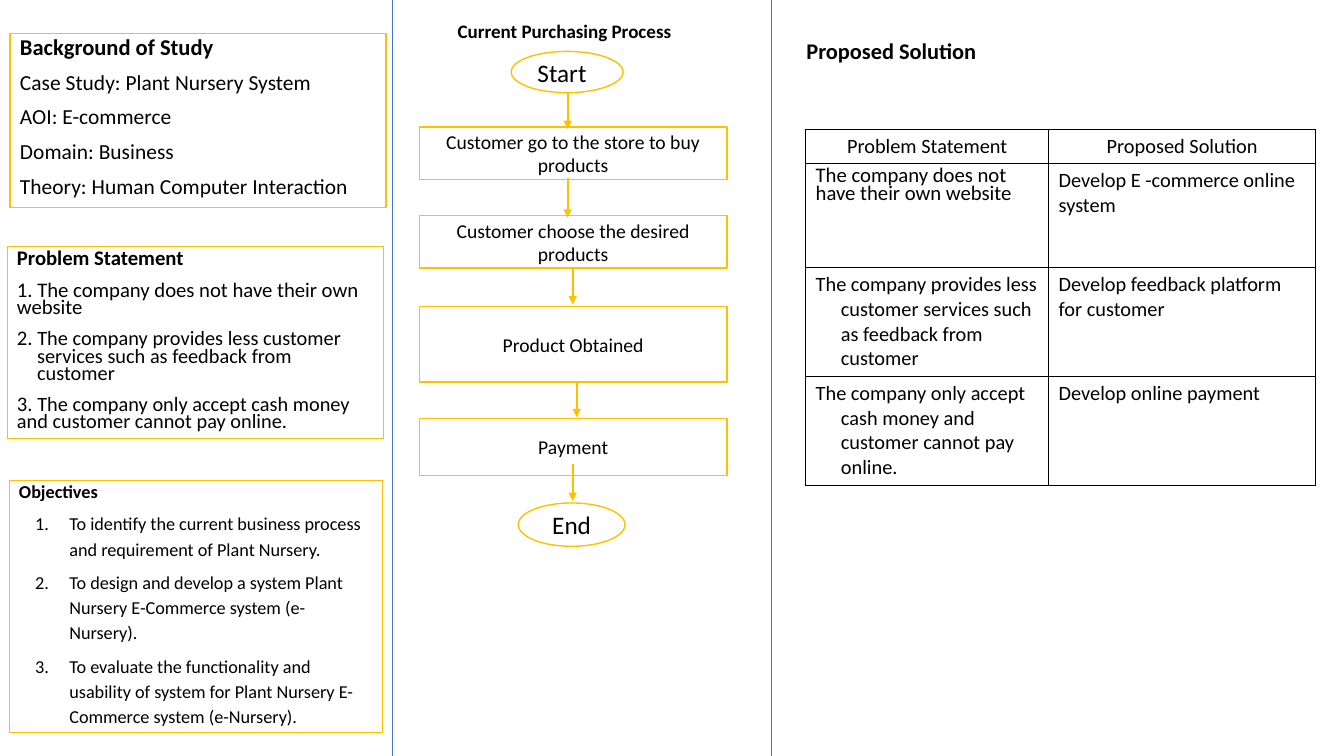
import pptx
import pptx.dml.color
import pptx.enum.shapes
import pptx.enum.text
import pptx.oxml
import pptx.oxml.ns
import pptx.util
from lxml import etree

Inches, Pt = pptx.util.Inches, pptx.util.Pt
SHAPES = pptx.enum.shapes.MSO_SHAPE
ALIGN = pptx.enum.text.PP_ALIGN
MIDDLE = pptx.enum.text.MSO_ANCHOR.MIDDLE

# Content
BACKGROUND = ["Case Study: Plant Nursery System", "AOI: E-commerce", "Domain: Business",
              "Theory: Human Computer Interaction"]
PROBLEMS = ["The company does not have their own website",
            "The company provides less customer services such as feedback from customer",
            "The company only accept cash money and customer cannot pay online."]
OBJECTIVES = [
    "To identify the current business process and requirement of Plant Nursery.",
    "To design and develop a system Plant Nursery E-Commerce system (e-Nursery).",
    "To evaluate the functionality and usability of system for Plant Nursery E-Commerce system (e-Nursery).",
]
SOLUTIONS = ["Develop E -commerce online system", "Develop feedback platform for customer",
             "Develop online payment"]
# Step text, top, height
STEPS = [("Customer go to the store to buy products", 1.26, 0.52),
         ("Customer choose the desired products", 2.14, 0.52),
         ("Product Obtained", 3.04, 0.75), ("Payment", 4.15, 0.57)]
# Terminal text, position and size, alignment
TERMINALS = [("Start", (5.07, 0.51, 1.11, 0.41), ALIGN.LEFT),
             ("End", (5.14, 4.99, 1.06, 0.43), ALIGN.CENTER)]
# Arrow x, top, bottom
ARROWS = [(5.63, 0.92, 1.28), (5.63, 1.77, 2.16), (5.68, 2.66, 3.02),
          (5.72, 3.78, 4.14), (5.68, 4.6, 4.97)]

# Layout
WIDTH, HEIGHT = 13.33, 7.5
FLOW_LEFT, FLOW_WIDTH = 4.16, 3.05
DIVIDERS = (3.89, 7.65)
TABLE_AT = (7.99, 1.28)
TABLE_COLUMNS = (2.41, 2.65)
TABLE_ROWS = (0.34, 1.03, 1.08, 1.08)
COLORS = {"text": "000000", "gold": "FFC000", "blue": "4472C4", "white": "FFFFFF"}

deck = pptx.Presentation()
deck.slide_width, deck.slide_height = Inches(WIDTH), Inches(HEIGHT)
slide = deck.slides.add_slide(deck.slide_layouts[6])


def color(name):
    return pptx.dml.color.RGBColor.from_string(COLORS[name])


def write(frame, text, size=14, bold=False, align=ALIGN.LEFT, spacing=None, before=0,
          indent=(0, 0), numbered=False):
    """Add one paragraph; text is a string or a list of (string, size) runs."""
    frame.word_wrap = True
    first = frame.paragraphs[0]
    paragraph = frame.add_paragraph() if first.runs else first
    paragraph.alignment, paragraph.space_before = align, Pt(before)
    if spacing:
        paragraph.line_spacing = spacing
    properties = paragraph._p.get_or_add_pPr()
    if indent[0]:
        properties.set("marL", str(Inches(indent[0])))
        properties.set("indent", str(Inches(indent[1])))
    if numbered:
        bullet = etree.SubElement(properties, pptx.oxml.ns.qn("a:buAutoNum"))
        bullet.set("type", "arabicPeriod")
    for words, points in [(text, size)] if isinstance(text, str) else text:
        run = paragraph.add_run()
        run.text = words
        run.font.name, run.font.size, run.font.bold = "Calibri", Pt(points), bold
        run.font.color.rgb = color("text")


def add_box(kind, place, line_width=1.0, anchor=pptx.enum.text.MSO_ANCHOR.TOP):
    box = slide.shapes.add_shape(kind, *map(Inches, place))
    box.shadow.inherit = False
    box.fill.solid()
    box.fill.fore_color.rgb = color("white")
    box.line.color.rgb, box.line.width = color("gold"), Pt(line_width)
    box.text_frame.vertical_anchor = anchor
    return box.text_frame


def add_line(x, top, bottom, hue, width, arrow=False):
    line = slide.shapes.add_connector(pptx.enum.shapes.MSO_CONNECTOR.STRAIGHT,
                                      *map(Inches, (x, top, x, bottom)))
    line.line.color.rgb, line.line.width = color(hue), Pt(width)
    if arrow:
        etree.SubElement(line.line._get_or_add_ln(), pptx.oxml.ns.qn("a:tailEnd")).set("type", "triangle")
    etree.SubElement(line._element.spPr, pptx.oxml.ns.qn("a:effectLst"))


def add_heading(text, place, **style):
    write(slide.shapes.add_textbox(*map(Inches, place)).text_frame, text, bold=True, **style)


def add_border(cell):
    for side in ("lnL", "lnR", "lnT", "lnB"):
        cell._tc.get_or_add_tcPr().append(pptx.oxml.parse_xml(
            f'<a:{side} xmlns:a="http://schemas.openxmlformats.org/drawingml/2006/main" w="9525">'
            f'<a:solidFill><a:srgbClr val="{COLORS["text"]}"/></a:solidFill></a:{side}>'))


# Left column: background, problems, objectives
background = add_box(SHAPES.RECTANGLE, (0.1, 0.33, 3.73, 1.73))
write(background, "Background of Study", size=16.1, bold=True, spacing=0.8)
for fact in BACKGROUND:
    write(background, fact, size=15.3, spacing=0.8, before=10)

problems = add_box(SHAPES.RECTANGLE, (0.07, 2.45, 3.73, 1.9), line_width=0.75)
write(problems, "Problem Statement", size=14.8, bold=True, spacing=0.7)
for number, problem in enumerate(PROBLEMS, 1):
    write(problems, [(f"{number}. ", 14.8), (problem, 14.8 if number == 1 else 14.5)],
          spacing=0.7, before=10, indent=(0.2, -0.2) if number == 2 else (0, 0))

objectives = add_box(SHAPES.RECTANGLE, (0.09, 4.77, 3.7, 2.5), line_width=0.75)
write(objectives, "Objectives", size=13, bold=True, spacing=0.7)
for objective in OBJECTIVES:
    write(objectives, objective, size=13, spacing=1.15, before=6, indent=(0.5, -0.34), numbered=True)

# Middle column: purchasing flow
add_heading("Current Purchasing Process", (4.44, 0.19, 2.48, 0.42), size=13.6, spacing=0.8)
for label, place, align in TERMINALS:
    write(add_box(SHAPES.OVAL, place, anchor=MIDDLE), label, size=18, align=align)
for step, top, height in STEPS:
    place = (FLOW_LEFT, top, FLOW_WIDTH, height)
    write(add_box(SHAPES.RECTANGLE, place, anchor=MIDDLE), step, align=ALIGN.CENTER)
for x, top, bottom in ARROWS:
    add_line(x, top, bottom, "gold", 1.5, arrow=True)

# Column dividers
for x in DIVIDERS:
    add_line(x, 0, HEIGHT, "blue", 0.75)

# Right column: solution table
add_heading("Proposed Solution", (7.9, 0.32, 1.91, 0.37), size=16)
solutions = slide.shapes.add_table(
    len(TABLE_ROWS), len(TABLE_COLUMNS),
    *map(Inches, (*TABLE_AT, sum(TABLE_COLUMNS), sum(TABLE_ROWS)))).table
solutions.first_row = solutions.horz_banding = False
for column, width in zip(solutions.columns, TABLE_COLUMNS):
    column.width = Inches(width)
for row, height in zip(solutions.rows, TABLE_ROWS):
    row.height = Inches(height)

entries = [("Problem Statement", "Proposed Solution"), *zip(PROBLEMS, SOLUTIONS)]
for r, pair in enumerate(entries):
    for c, entry in enumerate(pair):
        cell = solutions.cell(r, c)
        add_border(cell)
        cell.fill.background()
        style = {"size": 14.5}
        if r == 0:
            style["align"] = ALIGN.CENTER
        elif c == 0 and r == 1:
            style.update(size=14.8, spacing=0.7, before=10)
        elif c == 0:
            style["indent"] = (0.25, -0.25)
        write(cell.text_frame, entry, **style)

deck.save("out.pptx")
